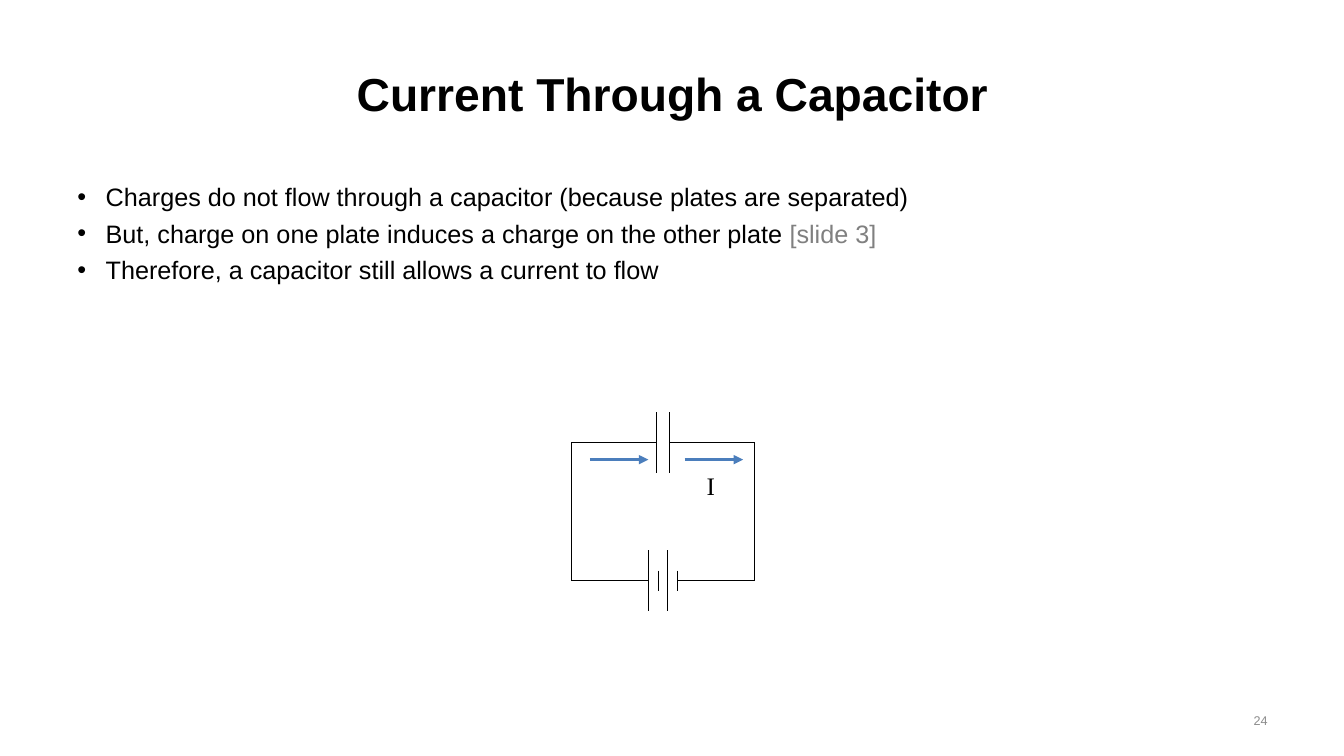
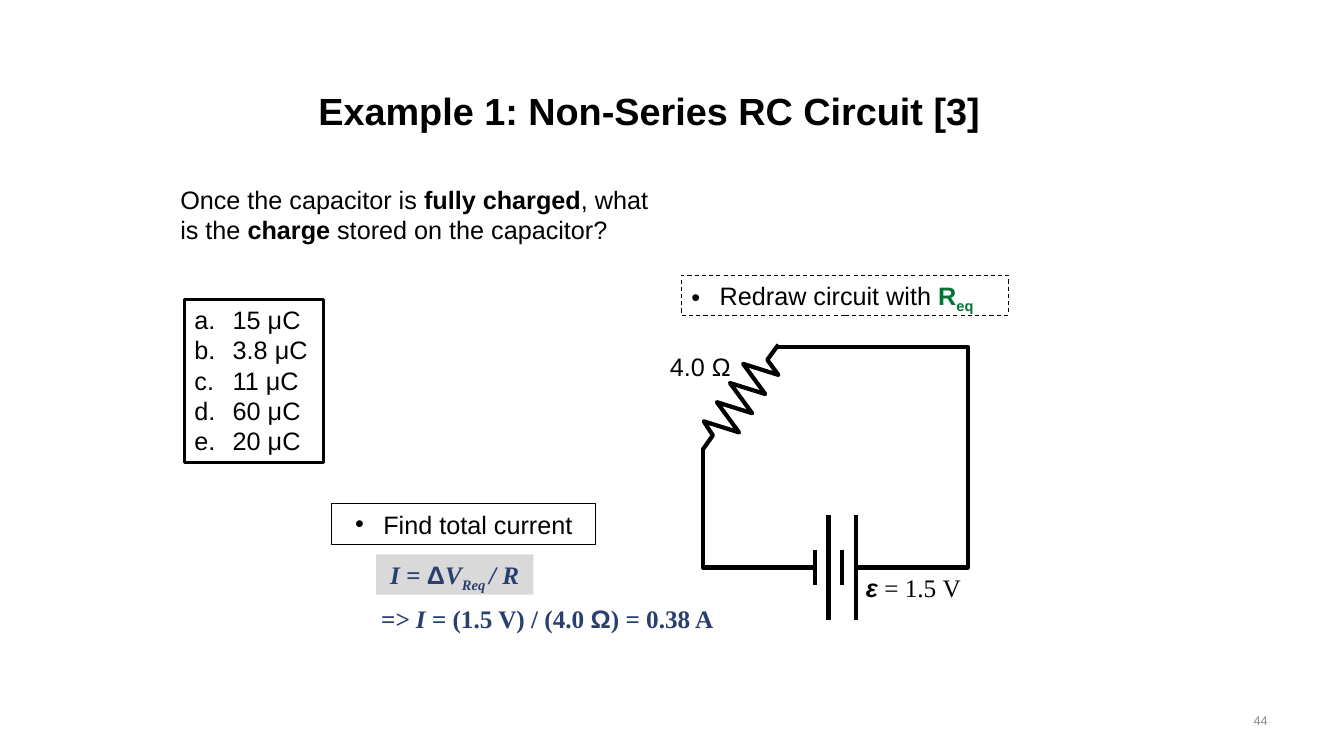
from lxml import etree
from pptx import Presentation
from pptx.dml.color import RGBColor
from pptx.enum.dml import MSO_LINE
from pptx.enum.shapes import MSO_CONNECTOR, MSO_SHAPE
from pptx.enum.text import MSO_ANCHOR, PP_ALIGN
from pptx.oxml.ns import qn
from pptx.util import Inches, Pt

COLORS = {
    "text": "000000",
    "muted": "808080",
    "number": "8C8C8C",
    "arrow": "4B7EBC",
    "formula": "293F6F",
    "result": "007434",
    "shade": "D9D9D9",
    "paper": "FFFFFF",
}
BODY = {"name": "Arial", "size": Pt(18), "bold": False, "italic": False, "color": "text"}
BOLD = {"bold": True}
SERIF = {"name": "Times New Roman"}
FORMULA = {**SERIF, **BOLD, "color": "formula"}
VARIABLE = {**FORMULA, "italic": True}
SUBSCRIPT = {"baseline": -25000}
BULLET = {"indent": 0.28, "tag": "a:buChar", "attrs": {"char": "•"}}
LETTER = {"indent": 0.38, "tag": "a:buAutoNum", "attrs": {"type": "alphaLcPeriod"}}


def rgb(name):
    return RGBColor.from_string(COLORS[name])


def add_run(p, text, fmt):
    r = p.add_run()
    r.text = text
    for key, value in {**BODY, **fmt}.items():
        if key == "color":
            r.font.color.rgb = rgb(value)
        elif key == "baseline":
            r._r.get_or_add_rPr().set(key, str(value))
        else:
            setattr(r.font, key, value)


def add_marker(p, marker):
    pPr = p._p.get_or_add_pPr()
    indent = Inches(marker["indent"])
    pPr.set("marL", str(indent))
    pPr.set("indent", str(-indent))
    etree.SubElement(pPr, qn("a:buFont")).set("typeface", "Arial")
    etree.SubElement(pPr, qn(marker["tag"]), marker["attrs"])


def fill_text(sp, paragraphs, align=PP_ALIGN.LEFT, anchor=MSO_ANCHOR.TOP,
              marker=None, before=0, wrap=True):
    tf = sp.text_frame
    tf.word_wrap = wrap
    tf.vertical_anchor = anchor
    for i, runs in enumerate(paragraphs):
        p = tf.paragraphs[0] if i == 0 else tf.add_paragraph()
        p.alignment = align
        p.space_before = Pt(before)
        if marker:
            add_marker(p, marker)
        for text, fmt in runs:
            add_run(p, text, fmt)


def add_text(s, box, paragraphs, **layout):
    sp = s.shapes.add_textbox(*map(Inches, box))
    fill_text(sp, paragraphs, **layout)


def add_panel(s, box, paragraphs, fill=None, width=None, dash=None, **layout):
    sp = s.shapes.add_shape(MSO_SHAPE.RECTANGLE, *map(Inches, box))
    sp.shadow.inherit = False
    if fill:
        sp.fill.solid()
        sp.fill.fore_color.rgb = rgb(fill)
    else:
        sp.fill.background()
    if width:
        sp.line.color.rgb = rgb("text")
        sp.line.width = Pt(width)
        if dash:
            sp.line.dash_style = dash
    else:
        sp.line.fill.background()
    fill_text(sp, paragraphs, **layout)


def add_line(s, x1, y1, x2, y2, width, color="text", arrow=False):
    cn = s.shapes.add_connector(MSO_CONNECTOR.STRAIGHT, *map(Inches, (x1, y1, x2, y2)))
    cn.line.color.rgb = rgb(color)
    cn.line.width = Pt(width)
    if arrow:
        etree.SubElement(cn.line._get_or_add_ln(), qn("a:tailEnd")).set("type", "triangle")
    etree.SubElement(cn._element.spPr, qn("a:effectLst"))


def add_outline(s, left, top, points, width):
    points = [(Inches(left + x), Inches(top + y)) for x, y in points]
    builder = s.shapes.build_freeform(*points[0], scale=1.0)
    builder.add_line_segments(points[1:], close=False)
    sp = builder.convert_to_shape()
    sp.shadow.inherit = False
    sp.fill.background()
    sp.line.color.rgb = rgb("text")
    sp.line.width = Pt(width)


def add_plates(s, left, middle, span, halves, width):
    for i, half in enumerate(halves):
        x = left + span * i / (len(halves) - 1)
        add_line(s, x, middle - half, x, middle + half, width)


def add_slide(prs, title, title_box, title_size, number):
    s = prs.slides.add_slide(prs.slide_layouts[6])
    add_text(s, title_box, [[(title, {**BOLD, "size": Pt(title_size)})]],
             align=PP_ALIGN.CENTER, anchor=MSO_ANCHOR.MIDDLE)
    add_text(s, (9.56, 6.95, 3.11, 0.4),
             [[(number, {"size": Pt(9), "color": "number"})]],
             align=PP_ALIGN.RIGHT, anchor=MSO_ANCHOR.MIDDLE)
    return s


def add_capacitor_circuit(s, box):
    left, top, w, h = box
    right, bottom = left + w, top + h
    capacitor, gap = left + 0.84, 0.13
    battery, span = left + 0.76, 0.29
    wires = [
        (left, top, capacitor, top),
        (capacitor + gap, top, right, top),
        (left, bottom, battery, bottom),
        (battery + span, bottom, right, bottom),
        (left, top, left, bottom),
        (right, top, right, bottom),
    ]
    for wire in wires:
        add_line(s, *wire, 0.75)
    add_plates(s, capacitor, top, gap, (0.3, 0.3), 0.75)
    add_plates(s, battery, bottom, span, (0.3, 0.1) * 2, 0.75)
    for start in (0.18, 1.12):
        x, y = left + start, top + 0.17
        add_line(s, x, y, x + 0.58, y, 2.25, "arrow", True)
    add_text(s, (left + 1.24, top + 0.23, 0.57, 0.4), [[("I", SERIF)]])


def add_resistor_circuit(s, box):
    left, top, w, h = box
    corner, battery, span = 0.43, 1.54, 0.41
    teeth = [(x - 0.13 * i, y + 0.19 * i)
             for i in range(4) for x, y in ((1.18, 0.28), (0.83, 0.17))]
    resistor = [(1.18, -0.02), (1.07, 0.13), *teeth, (0.53, 0.88), (corner, 1.02)]
    left_wire = [(battery, h), (corner, h), (corner, 1)]
    right_wire = [(1.16, 0), (w, 0), (w, h), (battery + span, h)]
    for points in (left_wire, resistor, right_wire):
        add_outline(s, left, top, points, 3)
    add_plates(s, left + battery, top + h, span, (0.17, 0.52) * 2, 3)
    add_text(s, (left, top, 0.81, 0.4), [[("4.0 Ω", {})]],
             align=PP_ALIGN.CENTER, wrap=False)
    add_text(s, (left + battery + span, top + h, 1.18, 0.4),
             [[("ε", {"bold": True, "italic": True}), (" = 1.5 V", SERIF)]])


def add_current_steps(s, box):
    left, top, w, h = box
    add_panel(s, (left, top, w, h), [[("Find total current", {})]],
              width=0.75, align=PP_ALIGN.CENTER, marker=BULLET)
    law = [("I = ", VARIABLE), ("Δ", {**FORMULA, "name": "Arial"}), ("V", VARIABLE),
           ("Req ", {**VARIABLE, **SUBSCRIPT}), ("/ R", VARIABLE)]
    add_panel(s, (left + 0.44, top + 0.5, 1.56, h), [law],
              fill="shade", align=PP_ALIGN.CENTER)
    result = [("=> I = ", VARIABLE), ("(1.5 V) / (4.0 ", FORMULA),
              ("Ω", {**FORMULA, "name": "Arial"}), (") = 0.38 A ", FORMULA)]
    add_text(s, (left + 0.38, top + 0.94, 3.5, h), [result],
             align=PP_ALIGN.CENTER, wrap=False)


def build_capacitor_slide(prs):
    s = add_slide(prs, "Current Through a Capacitor", (0.67, 0.3, 12, 1.25), 33, "24")
    points = [
        [("Charges do not flow through a capacitor (because plates are separated)", {})],
        [("But, charge on one plate induces a charge on the other plate ", {}),
         ("[slide 3]", {"color": "muted"})],
        [("Therefore, a capacitor still allows a current to flow", {})],
    ]
    add_text(s, (0.67, 1.75, 12, 4.95), points, marker=BULLET, before=4.5)
    add_capacitor_circuit(s, (5.67, 4.39, 1.81, 1.37))


def build_example_slide(prs):
    s = add_slide(prs, "Example 1: Non-Series RC Circuit [3]", (3, 0.63, 6.88, 0.94), 27, "44")
    add_resistor_circuit(s, (6.54, 3.44, 3.06, 2.19))
    question = [("Once the capacitor is ", {}), ("fully charged", BOLD),
                (", what is the ", {}), ("charge", BOLD),
                (" stored on the capacitor?", {})]
    add_text(s, (1.69, 1.78, 4.97, 0.71), [question])
    add_current_steps(s, (3.29, 5, 2.62, 0.4))
    answers = ("15 μC", "3.8 μC", "11 μC", "60 μC", "20 μC")
    add_panel(s, (1.83, 2.97, 1.38, 1.62), [[(a, {})] for a in answers],
              fill="paper", width=2, marker=LETTER)
    equivalent = {**BOLD, "color": "result"}
    redraw = [("Redraw circuit with ", {}), ("R", equivalent),
              ("eq", {**equivalent, **SUBSCRIPT})]
    add_panel(s, (6.76, 2.73, 3.24, 0.4), [redraw],
              width=0.75, dash=MSO_LINE.DASH, marker=BULLET)


def main():
    prs = Presentation()
    prs.slide_width = Inches(13.33)
    prs.slide_height = Inches(7.5)
    build_capacitor_slide(prs)
    build_example_slide(prs)
    prs.save("out.pptx")


if __name__ == "__main__":
    main()
